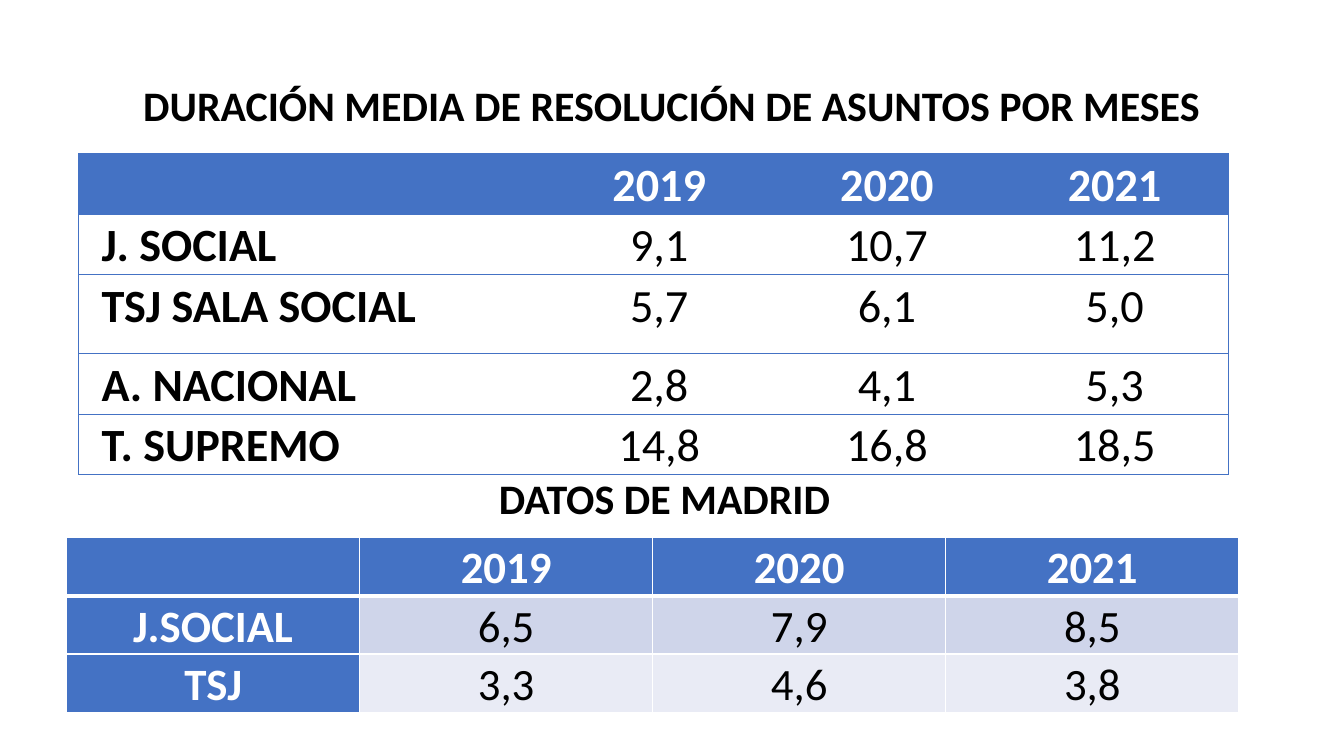
from lxml.etree import SubElement
from pptx import Presentation
from pptx.dml.color import RGBColor
from pptx.enum.text import MSO_ANCHOR as Anchor, PP_ALIGN as Align
from pptx.oxml.ns import qn
from pptx.util import Cm, Pt

BLUE, WHITE, BLACK = "4472C4", "FFFFFF", "000000"
BANDS = ("CFD5EA", "E9EBF5")
PLAIN_STYLE = "{2D5ABB26-0587-4C30-8999-92F81FD0307C}"
YEARS = ["", "2019", "2020", "2021"]
COURTS = [
    YEARS,
    ["J. SOCIAL", "9,1", "10,7", "11,2"],
    ["TSJ SALA SOCIAL", "5,7", "6,1", "5,0"],
    ["A. NACIONAL", "2,8", "4,1", "5,3"],
    ["T. SUPREMO", "14,8", "16,8", "18,5"],
]
MADRID = [
    YEARS,
    ["J.SOCIAL", "6,5", "7,9", "8,5"],
    ["TSJ", "3,3", "4,6", "3,8"],
]


def color(value):
    """Turn a hex string into a colour."""
    return RGBColor.from_string(value)


def write(frame, text, size=30, fill=BLACK, bold=True, align=Align.CENTER,
          spacing=1.07, after=0):
    """Write one formatted paragraph into a text frame."""
    para = frame.paragraphs[0]
    para.alignment, para.line_spacing, para.space_after = align, spacing, Pt(after)
    span = para.add_run()
    span.text = text
    span.font.name, span.font.size, span.font.bold = "Calibri", Pt(size), bold
    span.font.color.rgb = color(fill)


def add_heading(page, box, text):
    """Place a centred heading on the bottom of its box."""
    frame = page.shapes.add_textbox(*map(Cm, box)).text_frame
    frame.word_wrap = True
    frame.vertical_anchor = Anchor.BOTTOM
    write(frame, text, spacing=0.9)


def set_borders(cell, hue, widths):
    """Draw left, right, top and bottom cell borders, skipping zero widths."""
    props = cell._tc.get_or_add_tcPr()
    for side, width in zip("LRTB", widths):
        line = SubElement(props, qn(f"a:ln{side}"), w=str(Pt(width)))
        if width:
            fill = SubElement(line, qn("a:solidFill"))
            SubElement(fill, qn("a:srgbClr"), val=hue)
        else:
            SubElement(line, qn("a:noFill"))


def add_grid(page, box, rows, columns, heights, inset):
    """Add an unstyled table and yield its cells with their places and texts."""
    table = page.shapes.add_table(len(rows), len(columns), *map(Cm, box)).table
    table._tbl.tblPr.find(qn("a:tableStyleId")).text = PLAIN_STYLE
    for column, width in zip(table.columns, columns):
        column.width = Cm(width)
    for row, height in zip(table.rows, heights):
        row.height = Cm(height)
    for r, texts in enumerate(rows):
        for c, text in enumerate(texts):
            cell = table.cell(r, c)
            cell.margin_left = cell.margin_right = Cm(inset)
            cell.margin_top = cell.margin_bottom = 0
            yield cell, r, c, text


def add_court_table(page, box):
    """Build the outlined table of all courts."""
    year = box[2] * 0.198
    columns = [box[2] - 3 * year] + [year] * 3
    heights = [1.52, 1.52, 2, 1.52, 1.52]
    for cell, r, c, text in add_grid(page, box, COURTS, columns, heights, 0.58):
        set_borders(cell, BLUE, (0.5 * (c == 0), 0.5 * (c == 3), 0.5, 0.5))
        if r == 0:
            cell.fill.solid()
            cell.fill.fore_color.rgb = color(BLUE)
        if text:
            write(cell.text_frame, text, size=33, after=8,
                  fill=BLACK if r else WHITE, bold=r == 0 or c == 0,
                  align=Align.LEFT if c == 0 else Align.CENTER)


def add_madrid_table(page, box):
    """Build the banded table of Madrid."""
    columns, heights = [box[2] / 4] * 4, [box[3] / 3] * 3
    for cell, r, c, text in add_grid(page, box, MADRID, columns, heights, 0.19):
        header = r == 0 or c == 0
        set_borders(cell, WHITE, (1, 1, 3 if r == 1 else 1, 3 if r == 0 else 1))
        cell.fill.solid()
        cell.fill.fore_color.rgb = color(BLUE if header else BANDS[r - 1])
        if text:
            write(cell.text_frame, text, size=32, after=8, bold=header,
                  fill=WHITE if header else BLACK)


def main():
    """Build and save the deck."""
    deck = Presentation()
    deck.slide_width, deck.slide_height = Cm(33.87), Cm(19.05)
    page = deck.slides.add_slide(deck.slide_layouts[6])
    add_heading(page, (2.33, 0.81, 29.21, 2.6),
                "DURACIÓN MEDIA DE RESOLUCIÓN DE ASUNTOS POR MESES")
    add_court_table(page, (1.98, 3.87, 28.98, 8.08))
    add_madrid_table(page, (1.68, 13.54, 29.54, 4.41))
    add_heading(page, (1.98, 11.35, 29.54, 1.96), "DATOS DE MADRID")
    deck.save("out.pptx")


if __name__ == "__main__":
    main()
